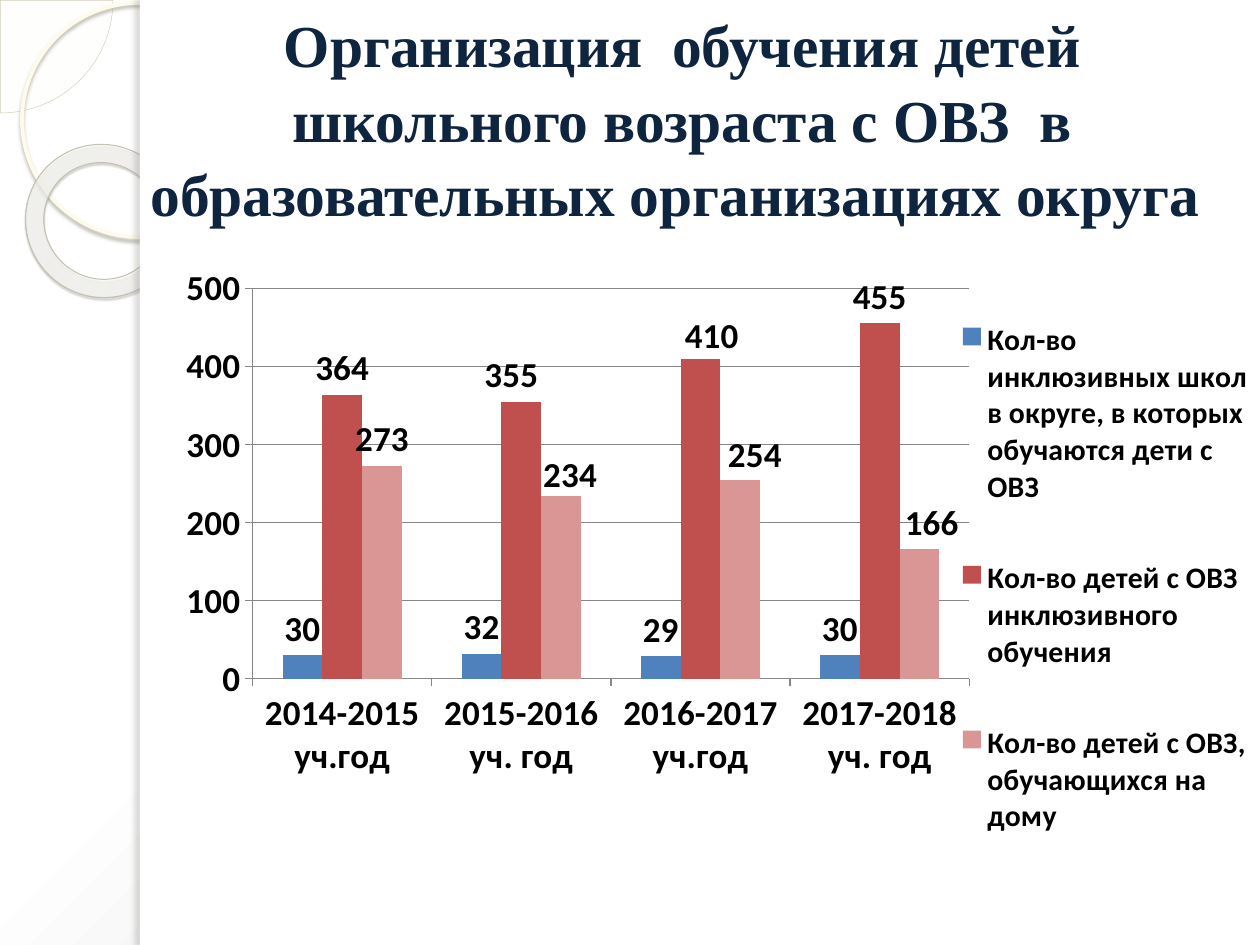
import pptx
import pptx.chart.data
import pptx.dml.color
import pptx.enum.chart
import pptx.enum.shapes
import pptx.enum.text
import pptx.oxml
import pptx.oxml.ns
import pptx.util

RGB = pptx.dml.color.RGBColor
SHAPE = pptx.enum.shapes.MSO_SHAPE
WHITE = RGB(0xFF, 0xFF, 0xFF)
BLACK = RGB(0x00, 0x00, 0x00)
NAVY = RGB(0x0F, 0x24, 0x3E)
SILVER = RGB(0xC5, 0xC5, 0xC5)
IVORY = RGB(0xFD, 0xFD, 0xF9)
PIE_LINE = RGB(0xD1, 0xCE, 0xBB)
CREAM = RGB(0xFE, 0xFB, 0xEC)
CREAM_SHADOW = RGB(0xB2, 0xB0, 0xA4)
RING_STOPS = [(0, RGB(0xFE, 0xFD, 0xFA), 70), (70, RGB(0xFF, 0xFF, 0xFC), 55),
              (100, RGB(0xE2, 0xDB, 0xB7), 60)]
RING_LINE = RGB(0xC5, 0xC1, 0xAE)
RING_SHADOW = RGB(0x5A, 0x58, 0x50)
EDGE_SHADOW = RGB(0x77, 0x75, 0x6F)
GRID = RGB(0x86, 0x86, 0x86)
BLUE = RGB(0x4F, 0x81, 0xBD)
RED = RGB(0xC0, 0x50, 0x4D)
PINK = RGB(0xD9, 0x96, 0x94)

YEARS = ["2014-2015 уч.год", "2015-2016 уч. год", "2016-2017 уч.год", "2017-2018 уч. год"]
SERIES = [
    ("Кол-во инклюзивных школ в округе, в которых обучаются дети с ОВЗ",
     (30, 32, 29, 30), BLUE, {}),
    ("Кол-во детей с ОВЗ инклюзивного обучения",
     (364, 355, 410, 455), RED, {1: (-10, 0), 2: (11, 4)}),
    ("Кол-во детей с ОВЗ, обучающихся на дому",
     (273, 234, 254, 166), PINK, {1: (9, 6), 2: (14, 1), 3: (12, 0)}),
]


def px(n):
    return pptx.util.Emu(round(n * 914400 / 126))


def xml(text):
    ns = pptx.oxml.ns.nsdecls("a", "c")
    return pptx.oxml.parse_xml(text.replace(" NS", " " + ns, 1))


def color_xml(color, opacity):
    return f'<a:srgbClr val="{color}"><a:alpha val="{opacity * 1000}"/></a:srgbClr>'


def radial_fill(props, stops, rect):
    gs = "".join(f'<a:gs pos="{pos * 1000}">{color_xml(c, a)}</a:gs>' for pos, c, a in stops)
    sides = " ".join(f'{side}="{v * 1000}"' for side, v in zip("ltrb", rect))
    grad = xml(f'<a:gradFill NS rotWithShape="1"><a:gsLst>{gs}</a:gsLst>'
               f'<a:path path="circle"><a:fillToRect {sides}/></a:path></a:gradFill>')
    solid = props.find(pptx.oxml.ns.qn("a:solidFill"))
    props.replace(solid, grad)


def add_shape(s, kind, box, fill=None, opacity=100, line=None, width=0, shadow=None):
    sp = s.shapes.add_shape(kind, *map(px, box))
    sp.shadow.inherit = False
    if fill is None:
        sp.fill.background()
    else:
        sp.fill.solid()
        sp.fill.fore_color.rgb = fill
        if opacity < 100:
            clr = sp.element.spPr.find(".//" + pptx.oxml.ns.qn("a:srgbClr"))
            clr.append(xml(f'<a:alpha NS val="{opacity * 1000}"/>'))
    if line is None:
        sp.line.fill.background()
    else:
        sp.line.color.rgb = line
        sp.line.width = pptx.util.Pt(width)
    if shadow:
        color, alpha, blur, dist, angle = shadow
        effects = sp.element.spPr.find(pptx.oxml.ns.qn("a:effectLst"))
        effects.append(xml(
            f'<a:outerShdw NS blurRad="{round(blur * 12700)}" dist="{round(dist * 12700)}" '
            f'dir="{angle * 60000}" algn="tl" rotWithShape="0">'
            f'{color_xml(color, alpha)}</a:outerShdw>'))
    return sp


def format_font(font, size, name="Calibri", color=BLACK, bold=True):
    font.size = pptx.util.Pt(size)
    font.name = name
    font.color.rgb = color
    font.bold = bold


def add_backdrop(s, x, y, w, h):
    s.background.fill.solid()
    s.background.fill.fore_color.rgb = WHITE
    radial_fill(s.element.xpath(".//p:bgPr")[0],
                [(0, WHITE, 100), (40, WHITE, 100), (100, SILVER, 100)], (-24, -20, 124, 120))
    pie = add_shape(s, SHAPE.PIE, (x - 112, y - 112, 225, 225), IVORY, 33, PIE_LINE, 0.25)
    pie.adjustments[0] = 0
    pie.adjustments[1] = 54.02
    add_shape(s, SHAPE.OVAL, (x + 22, y + 3, 234, 234), line=CREAM, width=2.15,
              shadow=(CREAM_SHADOW, 85, 2, 2, 90))
    ring = add_shape(s, SHAPE.DONUT, (x + 25, y + 145, 155, 152), WHITE, line=RING_LINE,
                     width=0.58, shadow=(RING_SHADOW, 35, 1, 1.2, 75))
    ring.adjustments[0] = 0.12
    ring.rotation = 38.6
    radial_fill(ring.element.spPr, RING_STOPS, (-408, -50, 508, 150))
    add_shape(s, SHAPE.RECTANGLE, (x + 140, y, w - 140, h), WHITE)
    add_shape(s, SHAPE.RECTANGLE, (x + 140, y, 10, h), WHITE, shadow=(EDGE_SHADOW, 25, 3, 3, 180))


def add_title(s, text, x, y, w, h):
    sp = s.shapes.title
    sp.element.getparent().append(sp.element)
    sp.left, sp.top, sp.width, sp.height = map(px, (x, y, w, h))
    tf = sp.text_frame
    tf.word_wrap = True
    tf.auto_size = pptx.enum.text.MSO_AUTO_SIZE.NONE
    tf.vertical_anchor = pptx.enum.text.MSO_ANCHOR.MIDDLE
    p = tf.paragraphs[0]
    p.alignment = pptx.enum.text.PP_ALIGN.CENTER
    p.line_spacing = 1.04
    r = p.add_run()
    r.text = text
    format_font(r.font, 34, "Times New Roman", NAVY)


def layout_xml(x, y, w=None, h=None, inner=False):
    parts = '<c:layoutTarget val="inner"/>' if inner else ""
    if w is not None:
        parts += '<c:xMode val="edge"/><c:yMode val="edge"/>'
    for tag, v in zip("xywh", (x, y, w, h)):
        if v is not None:
            parts += f'<c:{tag} val="{v:.3f}"/>'
    return xml(f"<c:layout NS><c:manualLayout>{parts}</c:manualLayout></c:layout>")


def set_layout(parent, after, layout):
    for old in parent.findall(pptx.oxml.ns.qn("c:layout")):
        parent.remove(old)
    if after is None:
        parent.insert(0, layout)
    else:
        parent.find(pptx.oxml.ns.qn(after)).addnext(layout)


def add_chart(s, x, y, w, h):
    xl = pptx.enum.chart
    data = pptx.chart.data.CategoryChartData()
    data.categories = YEARS
    for name, values, _, _ in SERIES:
        data.add_series(name, values)
    chart = s.shapes.add_chart(xl.XL_CHART_TYPE.COLUMN_CLUSTERED,
                               *map(px, (x, y, w, h)), data).chart
    format_font(chart.font, 18, bold=False)
    chart.has_title = False
    for axis in (chart.category_axis, chart.value_axis):
        format_font(axis.tick_labels.font, 20)
        axis.major_tick_mark = xl.XL_TICK_MARK.OUTSIDE
        axis.format.line.color.rgb = GRID
    chart.category_axis.has_major_gridlines = False
    chart.value_axis.minimum_scale = 0
    chart.value_axis.maximum_scale = 500
    chart.value_axis.major_unit = 100
    chart.value_axis.major_gridlines.format.line.color.rgb = GRID
    chart.has_legend = True
    chart.legend.position = xl.XL_LEGEND_POSITION.RIGHT
    chart.legend.include_in_layout = False
    format_font(chart.legend.font, 17)
    plot = chart.plots[0]
    plot.gap_width = 150
    plot.overlap = 0
    plot.vary_by_categories = False
    for series, (_, _, color, shifts) in zip(plot.series, SERIES):
        series.format.fill.solid()
        series.format.fill.fore_color.rgb = color
        labels = series.data_labels
        labels.show_value = True
        labels.position = xl.XL_LABEL_POSITION.OUTSIDE_END
        format_font(labels.font, 20)
        for i, (dx, dy) in shifts.items():
            label = series.points[i].data_label
            label.position = xl.XL_LABEL_POSITION.OUTSIDE_END
            format_font(label.font, 20)
            dlbl = series.data_labels._element.xpath(f'c:dLbl[c:idx/@val="{i}"]')[0]
            set_layout(dlbl, "c:idx", layout_xml(dx / w, dy / h))
    area = chart.element.xpath(".//c:plotArea")[0] if hasattr(chart, "element") \
        else chart._chartSpace.xpath(".//c:plotArea")[0]
    set_layout(area, None, layout_xml(0.099, 0.052, 0.641, 0.59, True))
    legend = area.getparent().find(pptx.oxml.ns.qn("c:legend"))
    set_layout(legend, "c:legendPos", layout_xml(0.73, 0.02, 0.27, 0.94))


def main():
    prs = pptx.Presentation()
    prs.slide_width, prs.slide_height = px(1260), px(945)
    s = prs.slides.add_slide(prs.slide_layouts[5])
    add_backdrop(s, 0, 0, 1260, 945)
    add_title(s, "Организация  обучения детей школьного возраста с ОВЗ  в "
                 "образовательных организациях округа ", 134, 37, 1097, 160)
    add_chart(s, 142, 254, 1118, 662)
    prs.save("out.pptx")


if __name__ == "__main__":
    main()
